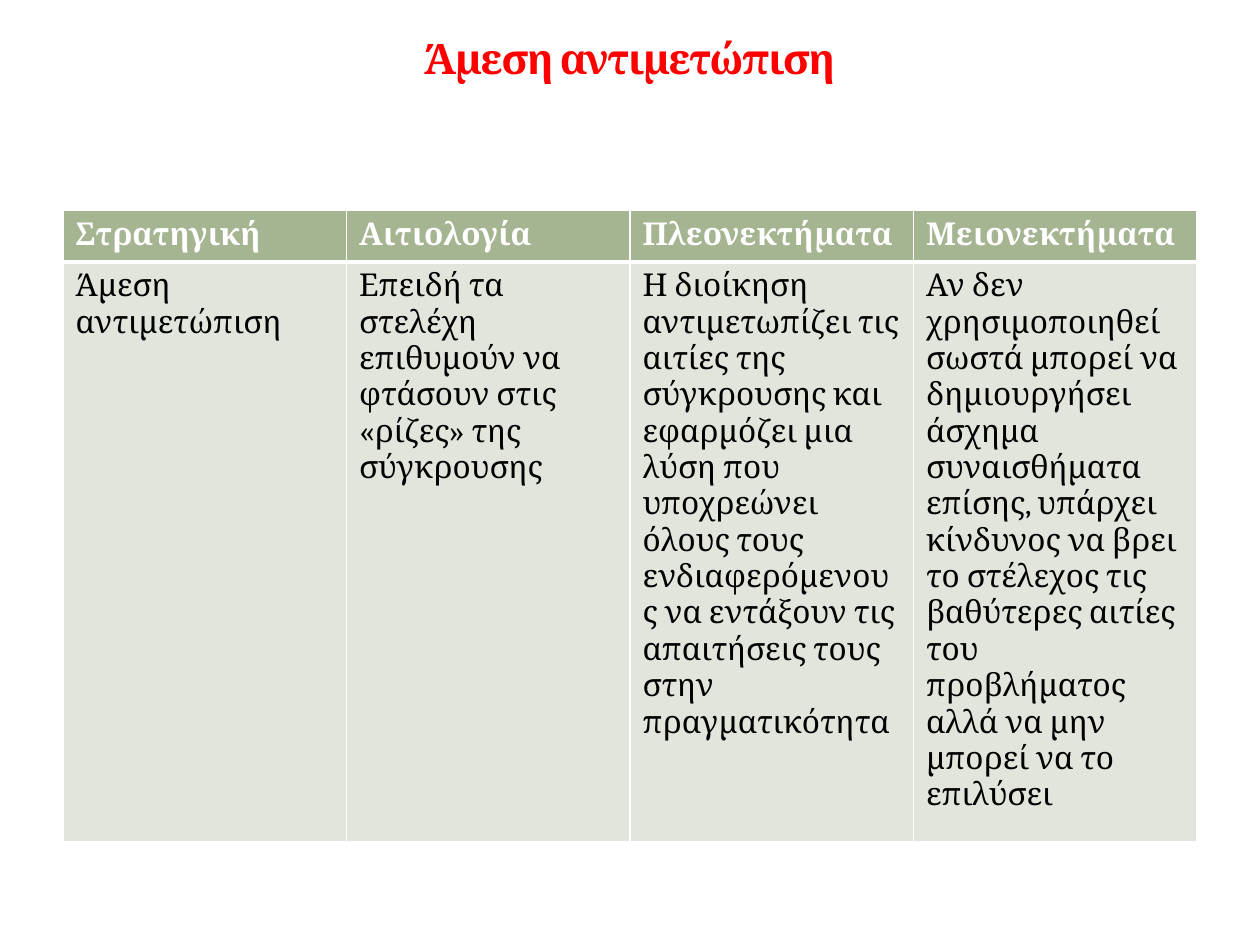
import pptx
import pptx.util
import pptx.dml.color
import pptx.enum.text
from dataclasses import dataclass
from lxml import etree

Inches = pptx.util.Inches
Pt = pptx.util.Pt
Align = pptx.enum.text.PP_ALIGN
Anchor = pptx.enum.text.MSO_ANCHOR


@dataclass(frozen=True)
class Theme:
    font: str = "Cambria"
    title: str = "FF0000"
    head: str = "A5B592"
    body: str = "E1E5DC"
    white: str = "FFFFFF"
    black: str = "000000"
    large: int = 24
    small: int = 18


THEME = Theme()

ROWS = [
    ["Στρατηγική", "Αιτιολογία", "Πλεονεκτήματα", "Μειονεκτήματα"],
    [
        "Άμεση αντιμετώπιση",
        "Επειδή τα στελέχη επιθυμούν να φτάσουν στις «ρίζες» της σύγκρουσης",
        "Η διοίκηση αντιμετωπίζει τις αιτίες της σύγκρουσης και εφαρμόζει "
        "μια λύση που υποχρεώνει όλους τους ενδιαφερόμενους να εντάξουν τις "
        "απαιτήσεις τους στην πραγματικότητα",
        "Αν δεν χρησιμοποιηθεί σωστά μπορεί να δημιουργήσει άσχημα "
        "συναισθήματα επίσης, υπάρχει κίνδυνος να βρει το στέλεχος τις "
        "βαθύτερες αιτίες του προβλήματος αλλά να μην μπορεί να το επιλύσει",
    ],
]


def paint(color):
    return pptx.dml.color.RGBColor.from_string(color)


def write(frame, text, size=THEME.small, color=THEME.black, bold=False,
          align=Align.LEFT, space=0):
    frame.word_wrap = True
    para = frame.paragraphs[0]
    para.alignment = align
    run = para.add_run()
    run.text = text
    run.font.name = THEME.font
    run.font.size = Pt(size)
    run.font.bold = bold
    run.font.color.rgb = paint(color)
    if space:
        run.font._element.set("spc", str(space * 100))


def border(cell, **widths):
    props = cell._tc.get_or_add_tcPr()
    space = props.nsmap["a"]
    for place, side in enumerate(("L", "R", "T", "B")):
        line = etree.Element(f"{{{space}}}ln{side}", w=str(Pt(widths.get(side, 1))))
        fill = etree.SubElement(line, f"{{{space}}}solidFill")
        etree.SubElement(fill, f"{{{space}}}srgbClr", val=THEME.white)
        props.insert(place, line)


def add_title(slide, text):
    box = slide.shapes.add_textbox(Inches(0.5), Inches(0.17), Inches(9), Inches(0.54))
    box.text_frame.vertical_anchor = Anchor.BOTTOM
    write(box.text_frame, text, size=THEME.large, color=THEME.title, bold=True,
          align=Align.CENTER, space=-1)


def add_grid(slide, rows, heights):
    count = len(rows[0])
    frame = slide.shapes.add_table(len(rows), count, Inches(0.5), Inches(1.67),
                                   Inches(9), Inches(sum(heights)))
    table = frame.table
    for col in table.columns:
        col.width = Inches(9 / count)
    for r, texts in enumerate(rows):
        head = r == 0
        table.rows[r].height = Inches(heights[r])
        for c, text in enumerate(texts):
            cell = table.cell(r, c)
            cell.fill.solid()
            cell.fill.fore_color.rgb = paint(THEME.head if head else THEME.body)
            write(cell.text_frame, text, bold=head,
                  color=THEME.white if head else THEME.black)
            border(cell, **({"B": 3} if head else {"T": 3}))


def main():
    deck = pptx.Presentation()
    deck.slide_width = Inches(10)
    deck.slide_height = Inches(7.5)
    slide = deck.slides.add_slide(deck.slide_layouts[6])
    add_title(slide, "Άμεση αντιμετώπιση")
    add_grid(slide, ROWS, [0.41, 4.41])
    deck.save("out.pptx")


main()
